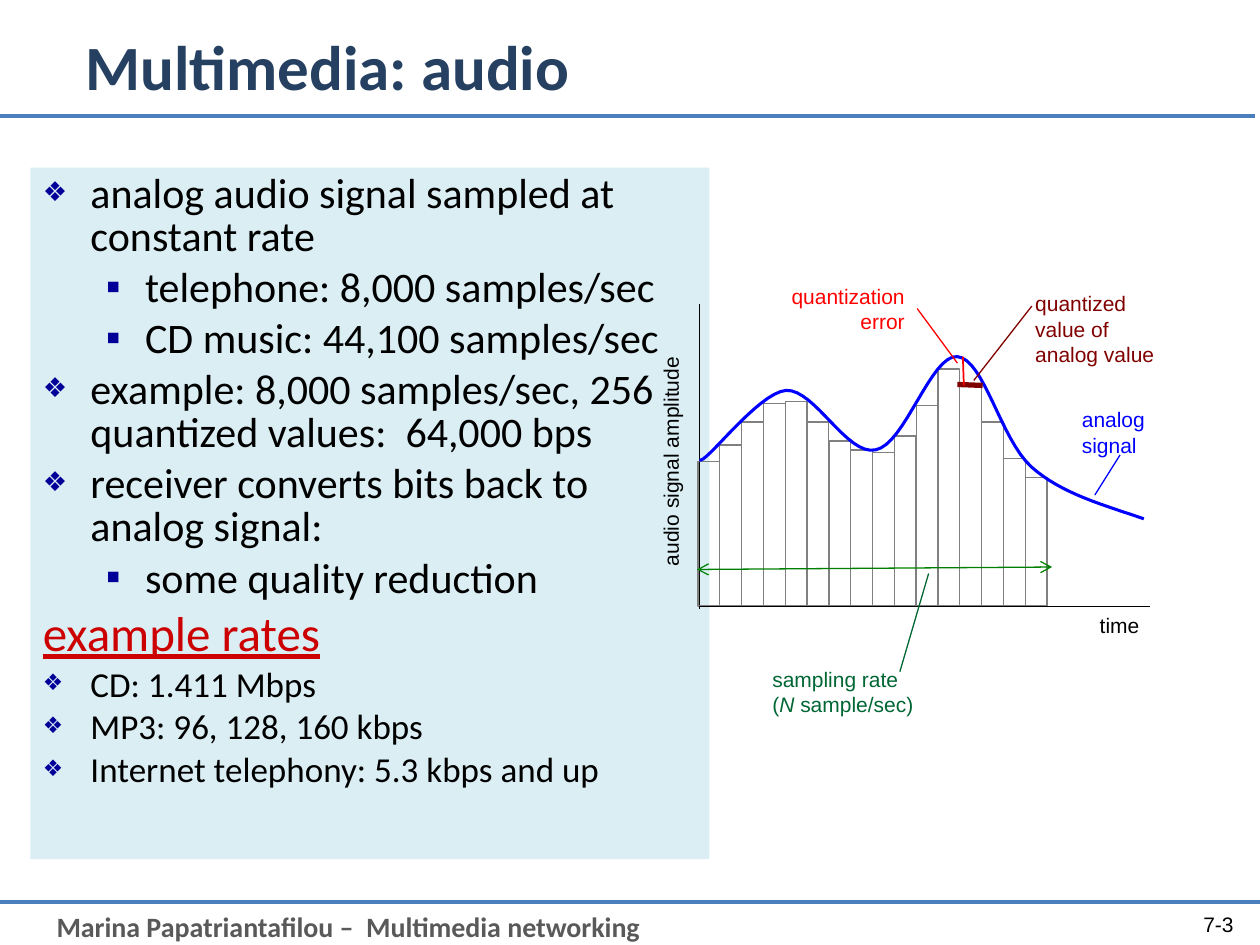
"""Builds a slide on how audio signals are sampled."""
from lxml import etree
from pptx import Presentation
from pptx import util as u
from pptx.dml.color import RGBColor
from pptx.enum import shapes, text
from pptx.oxml import ns

Cm, Pt = u.Cm, u.Pt
BLACK = RGBColor(0, 0, 0)
NAVY = RGBColor(0x25, 0x40, 0x61)
RULE = RGBColor(0x4B, 0x7E, 0xBC)
PALE = RGBColor(0xDB, 0xEE, 0xF4)
MARK = RGBColor(0, 0, 0x99)
SLATE = RGBColor(0x59, 0x59, 0x59)
GRAY = RGBColor(0x80, 0x80, 0x80)
BLUE = RGBColor(0, 0, 0xFF)
MAROON = RGBColor(0x80, 0, 0)
RED = RGBColor(0xFF, 0, 0)
CRIMSON = RGBColor(0xCC, 0, 0)
GREEN = RGBColor(0, 0x80, 0)
FOREST = RGBColor(0, 0x66, 0x33)
LEFT, RIGHT = text.PP_ALIGN.LEFT, text.PP_ALIGN.RIGHT

POINTS = [
    ("analog audio signal sampled at constant rate", 0, 24),
    ("telephone: 8,000 samples/sec", 1, 24),
    ("CD music: 44,100 samples/sec", 1, 24),
    ("example: 8,000 samples/sec, 256 quantized values:  64,000 bps", 0, 24),
    ("receiver converts bits back to analog signal:", 0, 24),
    ("some quality reduction", 1, 24),
    ("example rates", None, 28),
    ("CD: 1.411 Mbps", 0, 20),
    ("MP3: 96, 128, 160 kbps", 0, 20),
    ("Internet telephony: 5.3 kbps and up", 0, 20),
]
TOPS = [9.3, 8.97, 8.51, 8.13, 8.1, 8.51, 8.89, 9.07,
        9.12, 8.79, 8.18, 7.44, 7.77, 8.51, 9.25, 9.63]
BASE, STEP = 12.22, 0.44
CURVE = [(14.1, 9.27), (14.2, 9.4), (15.27, 7.92), (15.85, 7.87),
         (16.43, 7.85), (17.07, 9.19), (17.65, 9.07),
         (18.24, 8.97), (18.77, 7.14), (19.3, 7.19),
         (19.84, 7.24), (20.17, 8.86), (20.8, 9.42),
         (21.41, 9.96), (22.28, 10.19), (23.06, 10.46)]


def add(parent, tag, **attrs):
    """Append a drawing element with the given attributes."""
    return etree.SubElement(parent, ns.qn("a:" + tag), attrs)


def bend(knots, steps=16):
    """Return points along a chain of cubic curves."""
    spots = [knots[0]]
    for i in range(0, len(knots) - 1, 3):
        for n in range(1, steps + 1):
            t = n / steps
            parts = ((1 - t) ** 3, 3 * t * (1 - t) ** 2, 3 * t * t * (1 - t), t ** 3)
            spots.append(tuple(sum(w * k[axis] for w, k in zip(parts, knots[i:i + 4]))
                               for axis in (0, 1)))
    return spots


class Deck:
    """Holds the style and the current slide."""

    font, head = "Arial", "Calibri"

    def __init__(self):
        """Open a slide with a title and a body."""
        self.file = Presentation()
        self.file.slide_width, self.file.slide_height = Cm(25.4), Cm(19.05)
        self.slide = self.file.slides.add_slide(self.file.slide_layouts[1])
        self.items = self.slide.shapes

    def place(self, shape, x, y, w, h):
        """Move and size a shape."""
        shape.left, shape.top, shape.width, shape.height = Cm(x), Cm(y), Cm(w), Cm(h)

    def style(self, para, size, color, font, bold=False):
        """Format every run of a paragraph."""
        for run in para.runs:
            face = run.font
            face.name, face.size, face.bold = font, Pt(size), bold
            face.color.rgb = color

    def title(self, words, *box):
        """Fill the title placeholder."""
        shape = self.items.title
        self.place(shape, *box)
        frame = shape.text_frame
        frame.text = words
        frame.vertical_anchor = text.MSO_ANCHOR.MIDDLE
        frame.paragraphs[0].alignment = LEFT
        self.style(frame.paragraphs[0], 36, NAVY, self.head, True)

    def body(self, points, *box):
        """Fill the body placeholder with a list."""
        shape = self.slide.placeholders[1]
        self.place(shape, *box)
        shape.fill.solid()
        shape.fill.fore_color.rgb = PALE
        frame = shape.text_frame
        frame.text = "\n".join(point[0] for point in points)
        frame.auto_size = text.MSO_AUTO_SIZE.NONE
        for para, (_, level, size) in zip(frame.paragraphs, points):
            para.level = level or 0
            para.line_spacing = 0.85
            self.style(para, size, CRIMSON if level is None else BLACK, self.head)
            self.bullet(para, level)

    def bullet(self, para, level):
        """Set the indent and the bullet, or underline a heading."""
        props = para._p.get_or_add_pPr()
        left, hang = (2.06, 0.79) if level else (0.96, 0.96)
        props.set("marL", str(Cm(left)))
        props.set("indent", str(-Cm(hang)))
        if level is None:
            add(props, "buNone")
            para.runs[0].font.underline = True
            return
        add(add(props, "buClr"), "srgbClr", val=str(MARK))
        add(props, "buSzPct", val="100000" if level else "65000")
        add(props, "buChar", char="▪" if level else "❖")

    def label(self, words, box, color=BLACK, size=12, font=None, bold=False,
              align=LEFT, wrap=True, turn=0):
        """Add a text box."""
        shape = self.items.add_textbox(*map(Cm, box))
        shape.rotation = turn
        frame = shape.text_frame
        frame.text = words
        frame.word_wrap = wrap
        for para in frame.paragraphs:
            para.alignment = align
            self.style(para, size, color, font or self.font, bold)
        return frame

    def line(self, ends, color, width=0.75, arrows=False):
        """Add a straight line."""
        link = self.items.add_connector(shapes.MSO_CONNECTOR.STRAIGHT, *map(Cm, ends))
        link.line.color.rgb, link.line.width = color, Pt(width)
        if arrows:
            for tag in ("headEnd", "tailEnd"):
                add(link.line._get_or_add_ln(), tag, type="arrow")
        add(link._element.spPr, "effectLst")

    def hollow(self, shape, color, width):
        """Leave a shape with an outline only."""
        shape.shadow.inherit = False
        shape.fill.background()
        shape.line.color.rgb, shape.line.width = color, Pt(width)

    def bar(self, *box):
        """Add one sample bar."""
        shape = self.items.add_shape(shapes.MSO_SHAPE.RECTANGLE, *map(Cm, box))
        self.hollow(shape, GRAY, 0.75)

    def wave(self, knots):
        """Add the signal curve."""
        spots = [(Cm(x), Cm(y)) for x, y in bend(knots)]
        pen = self.items.build_freeform(*spots[0])
        pen.add_line_segments(spots[1:], close=False)
        self.hollow(pen.convert_to_shape(), BLUE, 1.75)


def main():
    """Draw the slide and save it."""
    deck = Deck()
    deck.line((0, 18.19, 25.4, 18.19), RULE, 2.25)
    deck.label("Marina Papatriantafilou –  Multimedia networking",
               (0.89, 18.21, 23.5, 0.94), SLATE, 16, deck.head, True)
    deck.line((0, 2.34, 25.3, 2.34), RULE, 2.25)
    deck.title("Multimedia: audio", 1.47, 0.3, 13.82, 2.03)
    page = deck.label("7-3", (23.09, 18.11, 2.03, 1.02), align=RIGHT)
    page.vertical_anchor = text.MSO_ANCHOR.MIDDLE
    deck.body(POINTS, 0.61, 3.38, 13.69, 13.94)

    deck.line((14.1, 6.12, 14.1, 12.27), BLACK)
    for i, top in enumerate(TOPS):
        deck.bar(14.07 + i * STEP, top, STEP, BASE - top)
    deck.line((14.1, BASE, 23.19, BASE), BLACK)
    deck.label("time", (21.92, 12.22, 1.32, 0.76), wrap=False)
    deck.label("audio signal amplitude", (11.13, 8.89, 4.78, 0.76), wrap=False, turn=270)

    deck.label("analog\nsignal", (21.56, 8.08, 1.8, 1.3), BLUE, wrap=False)
    deck.wave(CURVE)
    deck.line((22.58, 9.17, 22.07, 9.98), BLUE)
    deck.line((19.3, 7.75, 19.81, 7.77), MAROON, 3)
    deck.label("quantized value of\nanalog value", (20.62, 5.74, 3.25, 1.8), MAROON)
    deck.line((20.8, 6.17, 19.63, 7.67), MAROON)
    deck.label("quantization error", (15.42, 5.59, 3.07, 1.3), RED, align=RIGHT)
    deck.line((19.41, 7.19, 19.43, 7.77), RED, 1)
    deck.line((18.49, 6.22, 19.3, 7.32), RED)

    deck.line((14.05, 11.48, 21.21, 11.43), GREEN, arrows=True)
    rate = deck.label("sampling rate\n(", (15.32, 13.31, 4.75, 1.27), FOREST)
    last = rate.paragraphs[1]
    for words in ("N ", "sample/sec)"):
        last.add_run().text = words
    deck.style(last, 12, FOREST, deck.font)
    last.runs[1].font.italic = True
    deck.line((18.14, 13.54, 18.72, 11.56), FOREST)
    deck.file.save("out.pptx")


if __name__ == "__main__":
    main()
